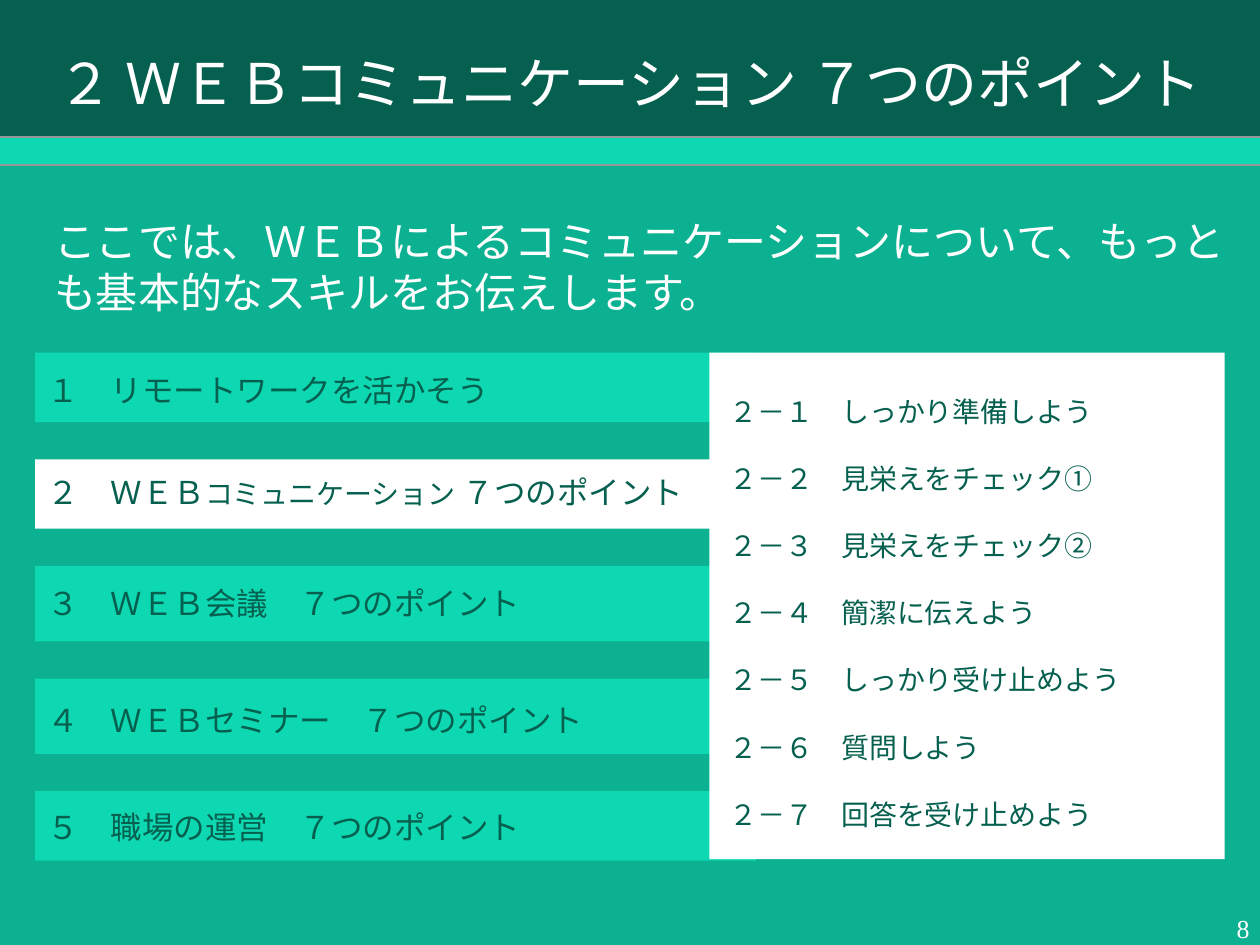
"""Build the agenda slide on seven points of web communication."""
from lxml.etree import SubElement
from pptx import Presentation
from pptx.dml.color import RGBColor
from pptx.enum.shapes import MSO_SHAPE
from pptx.enum.text import MSO_ANCHOR, PP_ALIGN
from pptx.oxml.ns import qn
from pptx.util import Cm, Pt

SANS = "Noto Sans CJK JP"
HUES = {"back": "0BB191", "dark": "06604F", "mint": "0ED8B2", "white": "FFFFFF", "gray": "969696"}
TINT = {name: RGBColor.from_string(code) for name, code in HUES.items()}


def style(par, size, hue, face=SANS, align=PP_ALIGN.LEFT):
    par.alignment = align
    for run in par.runs:
        run.font.size = Pt(size)
        run.font.name = face
        run.font.color.rgb = TINT[hue]
        SubElement(run._r.get_or_add_rPr(), qn("a:ea"), typeface=face)


def block(shapes, left, top, width, height, hue):
    rect = shapes.add_shape(MSO_SHAPE.RECTANGLE, Cm(left), Cm(top), Cm(width), Cm(height))
    rect.shadow.inherit = False
    rect.fill.solid()
    rect.fill.fore_color.rgb = TINT[hue]
    rect.line.fill.background()
    return rect


deck = Presentation()
deck.slide_width, deck.slide_height = Cm(25.4), Cm(19.05)
slide = deck.slides.add_slide(deck.slide_layouts[5])
slide.background.fill.solid()
slide.background.fill.fore_color.rgb = TINT["back"]

title = slide.shapes.title
title.left, title.top, title.width, title.height = Cm(0), Cm(0), Cm(25.4), Cm(3.33)
title.fill.solid()
title.fill.fore_color.rgb = TINT["dark"]
frame = title.text_frame
frame.text = "２ ＷＥＢコミュニケーション ７つのポイント"
frame.vertical_anchor = MSO_ANCHOR.MIDDLE
frame.margin_left = frame.margin_right = Cm(0.18)
frame.margin_top = frame.margin_bottom = Cm(0.1)
style(frame.paragraphs[0], 32, "white", align=PP_ALIGN.CENTER)

intro = slide.shapes.add_textbox(Cm(0.84), Cm(4.14), Cm(24.54), Cm(2.18))
frame = intro.text_frame
frame.word_wrap = True
frame.margin_top = Cm(0.2)
frame.text = "ここでは、ＷＥＢによるコミュニケーションについて、もっとも基本的なスキルをお伝えします。"
frame.paragraphs[0].line_spacing = Pt(29)
style(frame.paragraphs[0], 24, "white")

rows = [
    (1.4, 0.33, "mint", ["１　リモートワークを活かそう"]),
    (1.4, 0.25, "white", ["２　ＷＥＢ", "コミュニケーション", " ７つのポイント"]),
    (1.52, 0.33, "mint", ["３　ＷＥＢ会議　７つのポイント"]),
    (1.52, 0.43, "mint", ["４　ＷＥＢセミナー　７つのポイント"]),
    (1.4, 0.3, "mint", ["５　職場の運営　７つのポイント"]),
]
top = 7.11
for height, drop, hue, parts in rows:
    group = slide.shapes.add_group_shape()
    block(group.shapes, 0.71, top, 14.53, height, hue)
    label = group.shapes.add_textbox(Cm(0.71), Cm(top + drop), Cm(14.2), Cm(0.92))
    frame = label.text_frame
    frame.word_wrap = True
    frame.margin_top = Cm(0.03)
    par = frame.paragraphs[0]
    for part in parts:
        par.add_run().text = part
    style(par, 18, "dark")
    if len(parts) > 1:
        par.runs[1].font.size = Pt(16)
    top += height + 0.75

points = [
    "しっかり準備しよう",
    "見栄えをチェック①",
    "見栄えをチェック②",
    "簡潔に伝えよう",
    "しっかり受け止めよう",
    "質問しよう",
    "回答を受け止めよう",
]
panel = block(slide.shapes, 14.3, 7.11, 10.39, 10.21, "white")
frame = panel.text_frame
frame.vertical_anchor = MSO_ANCHOR.TOP
frame.margin_left, frame.margin_top = Cm(0.41), Cm(0.84)
frame.text = "\n".join(f"２－{num}　{point}" for num, point in zip("１２３４５６７", points))
for par in frame.paragraphs:
    par.line_spacing = par.space_after = Pt(19.2)
    style(par, 16, "dark")

band = block(slide.shapes, -0.03, 2.77, 25.48, 0.56, "mint")
band.line.color.rgb = TINT["gray"]
band.line.width = Pt(1)

page = slide.shapes.add_textbox(Cm(24.69), Cm(18.31), Cm(0.74), Cm(0.81))
frame = page.text_frame
frame.text = "8"
frame.word_wrap = False
frame.vertical_anchor = MSO_ANCHOR.MIDDLE
frame.margin_left = frame.margin_right = Cm(0.18)
frame.margin_top = frame.margin_bottom = Cm(0.1)
style(frame.paragraphs[0], 14.8, "white", "Times New Roman", PP_ALIGN.CENTER)

deck.save("out.pptx")
